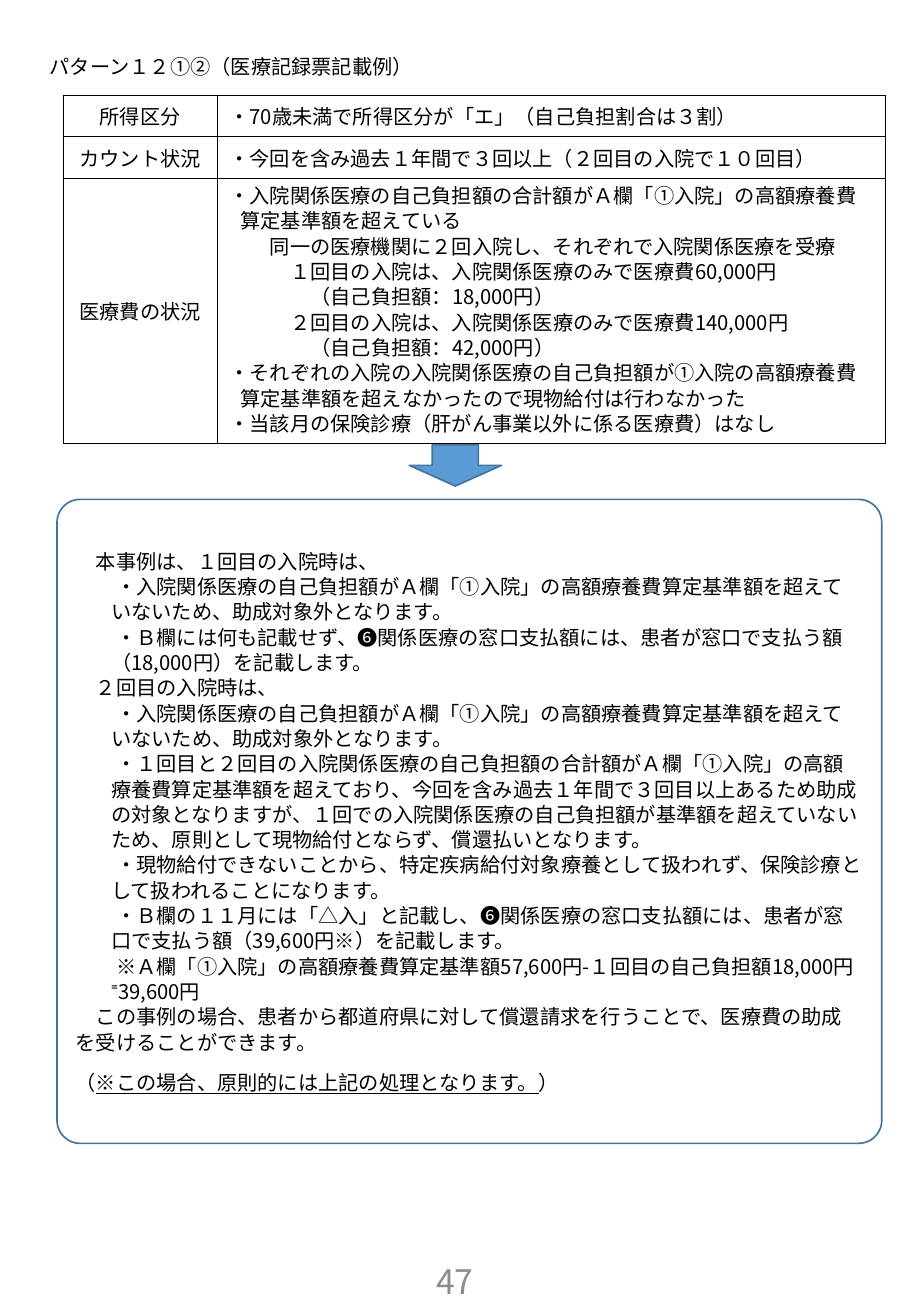
import pptx
import pptx.util
import pptx.dml.color
import pptx.enum.shapes
import pptx.enum.text
import pptx.oxml
import pptx.oxml.ns

Pt = pptx.util.Pt
ALIGN = pptx.enum.text.PP_ALIGN
ANCHOR = pptx.enum.text.MSO_ANCHOR
SHAPE = pptx.enum.shapes.MSO_SHAPE


def color(value):
    return pptx.dml.color.RGBColor.from_string(value)


class Page:
    font = "Noto Sans CJK JP"
    size = 12
    ink = "000000"
    paper = "FFFFFF"
    outline = "43739E"

    def __init__(self, presentation):
        self.slide = presentation.slides.add_slide(presentation.slide_layouts[5])

    def style(self, paragraph, size=None, ink=None, align=ALIGN.LEFT):
        paragraph.alignment = align
        for run in paragraph.runs:
            run.font.size = Pt(size or self.size)
            run.font.name = self.font
            run.font.color.rgb = color(ink or self.ink)
            east_asian = run.font._element.makeelement(
                pptx.oxml.ns.qn("a:ea"), {"typeface": self.font})
            run.font._element.find(pptx.oxml.ns.qn("a:latin")).addnext(east_asian)

    def lines(self, text_frame, entries):
        text_frame.text = "\n".join(text for text, margin, indent in entries)
        for paragraph, (text, margin, indent) in zip(text_frame.paragraphs, entries):
            properties = paragraph._p.get_or_add_pPr()
            properties.set("marL", str(Pt(margin)))
            properties.set("indent", str(Pt(indent)))
            paragraph.line_spacing = Pt(15)
            self.style(paragraph)

    def title(self, text, left, top, width, height):
        shape = self.slide.shapes.title
        shape.left, shape.top, shape.width, shape.height = map(Pt, (left, top, width, height))
        frame = shape.text_frame
        frame.auto_size = pptx.enum.text.MSO_AUTO_SIZE.NONE
        frame.vertical_anchor = ANCHOR.MIDDLE
        frame.text = text
        self.style(frame.paragraphs[0])

    def text(self, text, left, top, width, height, size, ink):
        shape = self.slide.shapes.add_textbox(*map(Pt, (left, top, width, height)))
        frame = shape.text_frame
        frame.word_wrap = True
        frame.vertical_anchor = ANCHOR.MIDDLE
        frame.text = text
        self.style(frame.paragraphs[0], size, ink, ALIGN.CENTER)

    def shape(self, kind, left, top, width, height, fill):
        shape = self.slide.shapes.add_shape(kind, *map(Pt, (left, top, width, height)))
        shape.shadow.inherit = False
        shape.fill.solid()
        shape.fill.fore_color.rgb = color(fill)
        shape.line.color.rgb = color(self.outline)
        shape.line.width = Pt(1)
        return shape

    def explanation(self, entries, note, left, top, width, height):
        shape = self.shape(SHAPE.ROUNDED_RECTANGLE, left, top, width, height, self.paper)
        shape.adjustments[0] = 0.036
        frame = shape.text_frame
        frame.word_wrap = True
        frame.vertical_anchor = ANCHOR.MIDDLE
        self.lines(frame, entries)
        paragraph = frame.add_paragraph()
        for part in note:
            paragraph.add_run().text = part
        paragraph.runs[1].font.underline = True
        paragraph.space_before = Pt(12)
        paragraph.line_spacing = Pt(12)
        self.style(paragraph)

    def border(self, cell):
        properties = cell._tc.get_or_add_tcPr()
        for position, side in enumerate(("lnL", "lnR", "lnT", "lnB")):
            properties.insert(position, pptx.oxml.parse_xml(
                f'<a:{side} {pptx.oxml.ns.nsdecls("a")} w="{Pt(0.5)}"><a:solidFill>'
                f'<a:srgbClr val="{self.ink}"/></a:solidFill></a:{side}>'))

    def table(self, rows, left, top, widths, heights):
        frame = self.slide.shapes.add_table(
            len(rows), len(widths), *map(Pt, (left, top, sum(widths), sum(heights))))
        table = frame.table
        table.first_row = table.horz_banding = False
        for column, width in zip(table.columns, widths):
            column.width = Pt(width)
        for row, height, (label, content) in zip(table.rows, heights, rows):
            row.height = Pt(height)
            label_cell, content_cell = row.cells
            label_cell.text_frame.text = label
            label_cell.vertical_anchor = ANCHOR.MIDDLE
            self.style(label_cell.text_frame.paragraphs[0], align=ALIGN.CENTER)
            if isinstance(content, str):
                content_cell.text_frame.text = content
                self.style(content_cell.text_frame.paragraphs[0])
            else:
                self.lines(content_cell.text_frame, content)
            for cell in row.cells:
                cell.fill.solid()
                cell.fill.fore_color.rgb = color(self.paper)
                self.border(cell)


def bullet(text):
    return text, 6.5, -6.5


def detail(text, level):
    return text, 12 * level, 0


def opening(text):
    return text, 0, 12


def point(text):
    return text, 21, 3


COSTS = [
    bullet("・入院関係医療の自己負担額の合計額がＡ欄「①入院」の高額療養費算定基準額を超えている"),
    detail("同一の医療機関に２回入院し、それぞれで入院関係医療を受療", 2),
    detail("１回目の入院は、入院関係医療のみで医療費60,000円", 3),
    detail("（自己負担額：18,000円）", 4),
    detail("２回目の入院は、入院関係医療のみで医療費140,000円", 3),
    detail("（自己負担額：42,000円）", 4),
    bullet("・それぞれの入院の入院関係医療の自己負担額が①入院の高額療養費算定基準額を超えなかったので現物給付は行わなかった"),
    bullet("・当該月の保険診療（肝がん事業以外に係る医療費）はなし"),
]
CONDITIONS = [
    ("所得区分", "・70歳未満で所得区分が「エ」（自己負担割合は３割）"),
    ("カウント状況", "・今回を含み過去１年間で３回以上（２回目の入院で１０回目）"),
    ("医療費の状況", COSTS),
]
NOT_COVERED = point("・入院関係医療の自己負担額がＡ欄「①入院」の高額療養費算定基準額を超えていないため、助成対象外となります。")
EXPLANATION = [
    opening("本事例は、１回目の入院時は、"),
    NOT_COVERED,
    point("・Ｂ欄には何も記載せず、❻関係医療の窓口支払額には、患者が窓口で支払う額（18,000円）を記載します。"),
    opening("２回目の入院時は、"),
    NOT_COVERED,
    point("・１回目と２回目の入院関係医療の自己負担額の合計額がＡ欄「①入院」の高額療養費算定基準額を超えており、"
          "今回を含み過去１年間で３回目以上あるため助成の対象となりますが、"
          "１回での入院関係医療の自己負担額が基準額を超えていないため、原則として現物給付とならず、償還払いとなります。"),
    point("・現物給付できないことから、特定疾病給付対象療養として扱われず、保険診療として扱われることになります。"),
    point("・Ｂ欄の１１月には「△入」と記載し、❻関係医療の窓口支払額には、患者が窓口で支払う額（39,600円※）を記載します。"),
    point("※Ａ欄「①入院」の高額療養費算定基準額57,600円-１回目の自己負担額18,000円⁼39,600円"),
    opening("この事例の場合、患者から都道府県に対して償還請求を行うことで、医療費の助成を受けることができます。"),
]
NOTE = ("（", "※この場合、原則的には上記の処理となります。", "）")


def main():
    presentation = pptx.Presentation()
    presentation.slide_width = Pt(540)
    presentation.slide_height = Pt(779.76)
    page = Page(presentation)
    page.title("パターン１２①②（医療記録票記載例）", 22.3, 28.8, 496, 21.6)
    page.shape(SHAPE.DOWN_ARROW, 242.6, 263.5, 54.7, 24.5, "5B9BD5")
    page.table(CONDITIONS, 37.4, 56.3, (91.4, 396), (24.6, 24.6, 157.2))
    page.explanation(EXPLANATION, NOTE, 33.8, 295.9, 488.9, 381.6)
    page.text("47", 218.2, 738.7, 103, 41, 20, "8C8C8C")
    presentation.save("out.pptx")


if __name__ == "__main__":
    main()
